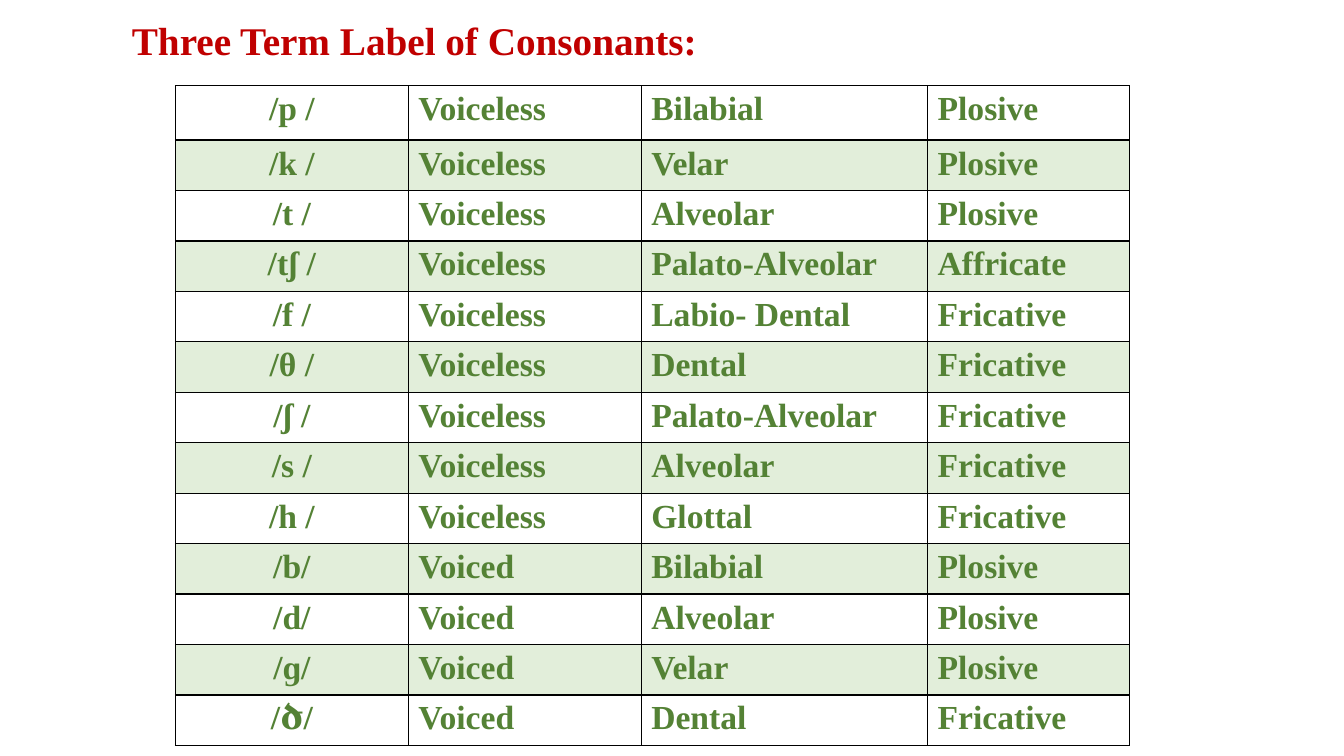
from dataclasses import dataclass

from lxml import etree
from pptx import Presentation
from pptx.dml.color import RGBColor
from pptx.enum.text import MSO_AUTO_SIZE, PP_ALIGN
from pptx.oxml.ns import qn
from pptx.util import Inches, Pt

LEFT, CENTER = PP_ALIGN.LEFT, PP_ALIGN.CENTER
FIT_SHAPE = MSO_AUTO_SIZE.SHAPE_TO_FIT_TEXT


@dataclass(frozen=True)
class Theme:
    font: str = "Times New Roman"
    title_size: int = 28
    cell_size: int = 24
    title: str = "C00000"
    label: str = "548235"
    band: str = "70AD47"
    band_opacity: int = 20
    border: str = "000000"
    border_width: int = 1


THEME = Theme()
TITLE = "Three Term Label of Consonants:"
CONSONANTS = [
    ("/p /", "Voiceless", "Bilabial", "Plosive"),
    ("/k /", "Voiceless", "Velar", "Plosive"),
    ("/t /", "Voiceless", "Alveolar", "Plosive"),
    ("/tʃ /", "Voiceless", "Palato-Alveolar", "Affricate"),
    ("/f /", "Voiceless", "Labio- Dental", "Fricative"),
    ("/θ /", "Voiceless", "Dental", "Fricative"),
    ("/ʃ /", "Voiceless", "Palato-Alveolar", "Fricative"),
    ("/s /", "Voiceless", "Alveolar", "Fricative"),
    ("/h /", "Voiceless", "Glottal", "Fricative"),
    ("/b/", "Voiced", "Bilabial", "Plosive"),
    ("/d/", "Voiced", "Alveolar", "Plosive"),
    ("/ɡ/", "Voiced", "Velar", "Plosive"),
    ("/ծ/", "Voiced", "Dental", "Fricative"),
]
COLUMN_WIDTHS = (2.31, 2.31, 2.84, 2)
FIRST_ROW_HEIGHT, ROW_HEIGHT = 0.54, 0.5


def write_text(tf, text, *, size, color, align=LEFT, bold=True):
    p = tf.paragraphs[0]
    p.alignment = align
    r = p.add_run()
    r.text = text
    r.font.name = THEME.font
    r.font.size = Pt(size)
    r.font.bold = bold
    r.font.color.rgb = RGBColor.from_string(color)


def add_title(slide):
    sp = slide.shapes.add_textbox(Inches(1.21), Inches(0.11), Inches(6.84), Inches(0.57))
    tf = sp.text_frame
    tf.word_wrap = True
    tf.auto_size = FIT_SHAPE
    write_text(tf, TITLE, size=THEME.title_size, color=THEME.title)


def set_borders(cell):
    """Draw all four edges; call before filling, as edges precede the fill in XML."""
    props = cell._tc.get_or_add_tcPr()
    for edge in ("a:lnL", "a:lnR", "a:lnT", "a:lnB"):
        line = etree.SubElement(props, qn(edge), w=str(Pt(THEME.border_width)))
        fill = etree.SubElement(line, qn("a:solidFill"))
        etree.SubElement(fill, qn("a:srgbClr"), val=THEME.border)


def set_band(cell, banded):
    if not banded:
        cell.fill.background()
        return
    cell.fill.solid()
    cell.fill.fore_color.rgb = RGBColor.from_string(THEME.band)
    color = cell._tc.tcPr.find(qn("a:solidFill")).find(qn("a:srgbClr"))
    etree.SubElement(color, qn("a:alpha"), val=str(THEME.band_opacity * 1000))


def add_consonant_table(slide):
    heights = [FIRST_ROW_HEIGHT] + [ROW_HEIGHT] * (len(CONSONANTS) - 1)
    table = slide.shapes.add_table(
        len(heights), len(COLUMN_WIDTHS), Inches(1.74), Inches(0.85),
        Inches(sum(COLUMN_WIDTHS)), Inches(sum(heights))).table
    table.first_row = table.horz_banding = False
    for column, width in zip(table.columns, COLUMN_WIDTHS):
        column.width = Inches(width)
    for row, height in zip(table.rows, heights):
        row.height = Inches(height)
    for i, consonant in enumerate(CONSONANTS):
        for j, text in enumerate(consonant):
            cell = table.cell(i, j)
            set_borders(cell)
            set_band(cell, banded=i % 2 == 1)
            write_text(cell.text_frame, text, size=THEME.cell_size,
                       color=THEME.label, align=CENTER if j == 0 else LEFT)


def main():
    prs = Presentation()
    prs.slide_width, prs.slide_height = Inches(13.33), Inches(7.5)
    slide = prs.slides.add_slide(prs.slide_layouts[6])
    add_title(slide)
    add_consonant_table(slide)
    prs.save("out.pptx")


if __name__ == "__main__":
    main()
